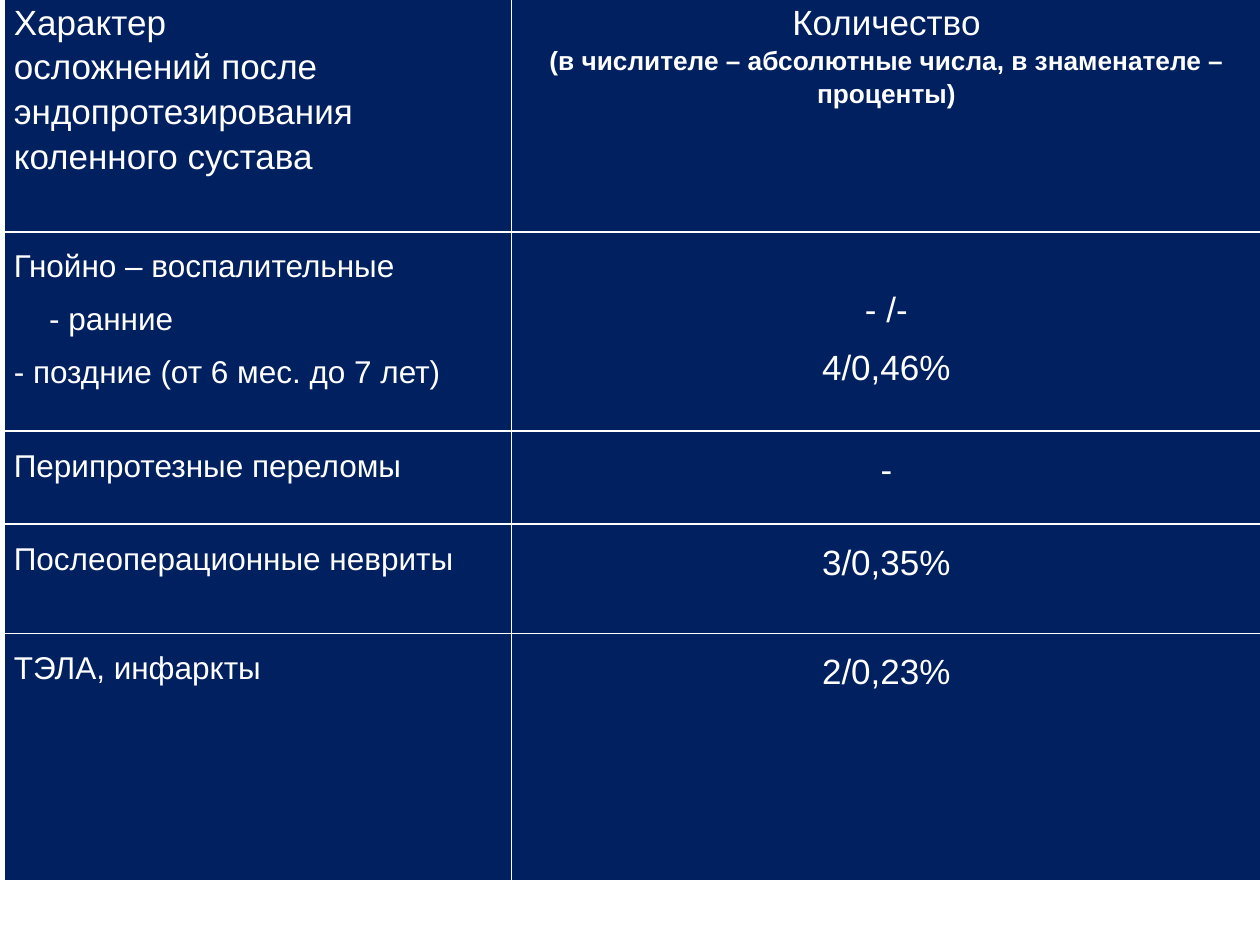
"""Build a slide with a table of knee replacement complications."""
import lxml.etree
import pptx
import pptx.dml.color
import pptx.enum.text
import pptx.oxml.ns
import pptx.util

Inches = pptx.util.Inches
NAVY = "002060"
WHITE = "FFFFFF"
LEFT = pptx.enum.text.PP_ALIGN.LEFT
CENTER = pptx.enum.text.PP_ALIGN.CENTER
COLUMN_WIDTHS = [4.03, 5.95]
ROW_HEIGHTS = [1.86, 1.58, 0.74, 0.87, 1.96]
HEADERS = [
    [("Характер", {}), ("осложнений после эндопротезирования коленного сустава", {})],
    [("Количество", {}),
     ("(в числителе – абсолютные числа, в знаменателе – проценты)",
      {"size": 15, "bold": True})],
]
COMPLICATIONS = [
    ([("Гнойно – воспалительные", {}), ("- ранние", {"indent": 0.28}),
      ("- поздние (от 6 мес. до 7 лет)", {})],
     [("- /-", {}), ("4/0,46%", {})], 0.31),
    ([("Перипротезные переломы", {})], [("-", {})], 0),
    ([("Послеоперационные невриты", {})], [("3/0,35%", {})], 0),
    ([("ТЭЛА, инфаркты", {})], [("2/0,23%", {})], 0),
]


def rgb(color):
    """Return the colour for a hex string."""
    return pptx.dml.color.RGBColor.from_string(color)


def format_text(paragraph, text, size=20, bold=False, align=LEFT, spacing=1.5, indent=0):
    """Write text into a paragraph with the given format."""
    if indent:
        paragraph._p.get_or_add_pPr().set("marL", str(Inches(indent)))
    paragraph.alignment = align
    paragraph.line_spacing = spacing
    run = paragraph.add_run()
    run.text = text
    run.font.name = "Arial"
    run.font.size = pptx.util.Pt(size)
    run.font.bold = bold
    run.font.color.rgb = rgb(WHITE)


def add_borders(cell, color, width=1):
    """Draw solid borders on all four sides of a cell."""
    properties = cell._tc.get_or_add_tcPr()
    for side in ("a:lnL", "a:lnR", "a:lnT", "a:lnB"):
        line = lxml.etree.SubElement(
            properties, pptx.oxml.ns.qn(side), w=str(pptx.util.Pt(width)))
        fill = lxml.etree.SubElement(line, pptx.oxml.ns.qn("a:solidFill"))
        lxml.etree.SubElement(fill, pptx.oxml.ns.qn("a:srgbClr"), val=color)


def fill_cell(cell, paragraphs, top=0, **text_format):
    """Set the margins, borders, fill and paragraphs of a cell."""
    cell.margin_left = cell.margin_right = Inches(0.08)
    cell.margin_top = Inches(top)
    cell.margin_bottom = 0
    add_borders(cell, WHITE)
    cell.fill.solid()
    cell.fill.fore_color.rgb = rgb(NAVY)
    frame = cell.text_frame
    for index, (text, changes) in enumerate(paragraphs):
        paragraph = frame.add_paragraph() if index else frame.paragraphs[0]
        format_text(paragraph, text, **{**text_format, **changes})


def add_grid(slide):
    """Add the empty table with its column widths and row heights."""
    table = slide.shapes.add_table(
        len(ROW_HEIGHTS), len(COLUMN_WIDTHS), Inches(0.03), Inches(-0.02),
        Inches(sum(COLUMN_WIDTHS)), Inches(sum(ROW_HEIGHTS))).table
    table.first_row = table.horz_banding = False
    for column, width in zip(table.columns, COLUMN_WIDTHS):
        column.width = Inches(width)
    for row, height in zip(table.rows, ROW_HEIGHTS):
        row.height = Inches(height)
    return table


def main():
    """Build and save the presentation."""
    presentation = pptx.Presentation()
    presentation.slide_width = Inches(10)
    presentation.slide_height = Inches(7.5)
    slide = presentation.slides.add_slide(presentation.slide_layouts[6])
    table = add_grid(slide)
    for column, (header, align) in enumerate(zip(HEADERS, (LEFT, CENTER))):
        fill_cell(table.cell(0, column), header, align=align, spacing=1.15)
    for row, (names, counts, top) in enumerate(COMPLICATIONS, start=1):
        fill_cell(table.cell(row, 0), names, size=18)
        fill_cell(table.cell(row, 1), counts, top=top, align=CENTER)
    presentation.save("out.pptx")


if __name__ == "__main__":
    main()
